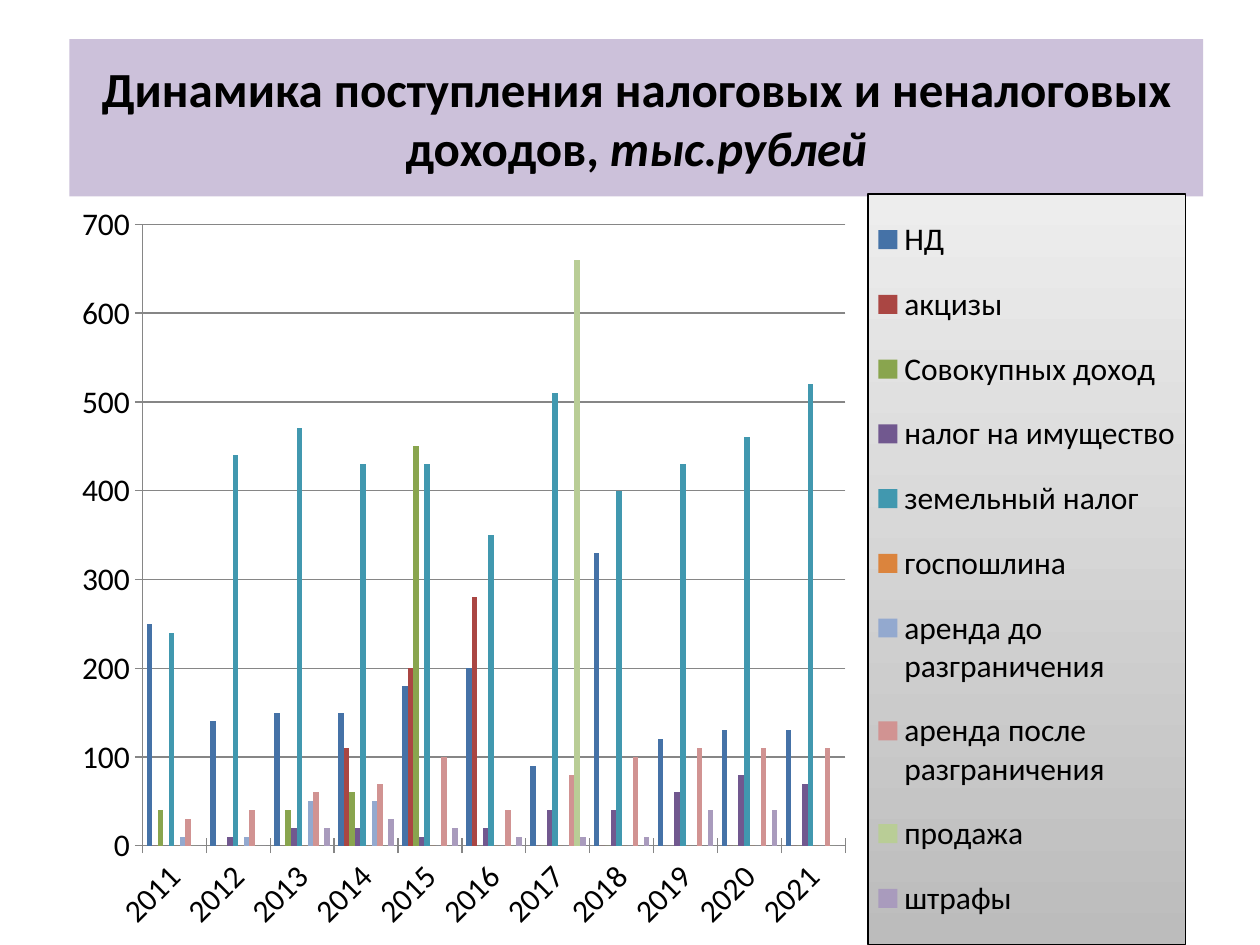
from typing import NamedTuple

from lxml import etree
from pptx import Presentation
from pptx.chart.data import CategoryChartData
from pptx.dml.color import RGBColor
from pptx.enum.chart import XL_CHART_TYPE, XL_LEGEND_POSITION, XL_TICK_MARK
from pptx.enum.text import MSO_ANCHOR, PP_ALIGN
from pptx.enum.shapes import MSO_SHAPE
from pptx.oxml import parse_xml
from pptx.oxml.ns import nsdecls, qn
from pptx.util import Inches, Pt

CLUSTERED = XL_CHART_TYPE.COLUMN_CLUSTERED
RIGHT = XL_LEGEND_POSITION.RIGHT
CROSS = XL_TICK_MARK.CROSS
NO_TICK = XL_TICK_MARK.NONE
MIDDLE = MSO_ANCHOR.MIDDLE
CENTER = PP_ALIGN.CENTER
RECTANGLE = MSO_SHAPE.RECTANGLE

FONT = "Calibri"
BLACK = RGBColor(0x00, 0x00, 0x00)
LILAC = RGBColor(0xCC, 0xC1, 0xDA)
AXIS_GREY = RGBColor(0x86, 0x86, 0x86)
LEGEND_TOP = RGBColor(0xED, 0xED, 0xED)
LEGEND_BOTTOM = RGBColor(0xBC, 0xBC, 0xBC)
BLUE = RGBColor(0x45, 0x72, 0xA7)
RED = RGBColor(0xAA, 0x46, 0x43)
GREEN = RGBColor(0x89, 0xA5, 0x4E)
PURPLE = RGBColor(0x71, 0x58, 0x8F)
TEAL = RGBColor(0x41, 0x98, 0xAF)
ORANGE = RGBColor(0xDB, 0x84, 0x3D)
PALE_BLUE = RGBColor(0x93, 0xA9, 0xCF)
PALE_RED = RGBColor(0xD1, 0x93, 0x92)
PALE_GREEN = RGBColor(0xB9, 0xCD, 0x96)
PALE_PURPLE = RGBColor(0xA9, 0x9B, 0xBD)


class Box(NamedTuple):
    left: float
    top: float
    width: float
    height: float

    def inches(self) -> list:
        return [Inches(v) for v in self]


class Income(NamedTuple):
    name: str
    color: RGBColor
    values: list


TITLE_BOX = Box(0.55, 0.31, 9, 1.25)
CHART_BOX = Box(0.5, 1.48, 9, 6.02)
PLOT_SHARE = Box(0.07, 0.05, 0.62, 0.82)
LEGEND_SHARE = Box(0.71, 0.01, 0.28, 0.99)

YEARS = [str(year) for year in range(2011, 2022)]
INCOMES = [
    Income("НД", BLUE, [250, 140, 150, 150, 180, 200, 90, 330, 120, 130, 130]),
    Income("акцизы", RED, [0, 0, 0, 110, 200, 280, 0, 0, None, 0, 0]),
    Income("Совокупных доход", GREEN, [40, 0, 40, 60, 450, 0, 0, 0, None, 0, 0]),
    Income("налог на имущество", PURPLE, [0, 10, 20, 20, 10, 20, 40, 40, 60, 80, 70]),
    Income("земельный налог", TEAL,
           [240, 440, 470, 430, 430, 350, 510, 400, 430, 460, 520]),
    Income("госпошлина", ORANGE, [0] * len(YEARS)),
    Income("аренда до разграничения", PALE_BLUE,
           [10, 10, 50, 50, 0, 0, 0, 0, None, 0, 0]),
    Income("аренда после разграничения", PALE_RED,
           [30, 40, 60, 70, 100, 40, 80, 100, 110, 110, 110]),
    Income("продажа", PALE_GREEN, [0, 0, 0, 0, 0, 0, 660, 0, None, None, 0]),
    Income("штрафы", PALE_PURPLE, [0, 0, 20, 30, 20, 10, 10, 10, 40, 40, 0]),
]


def layout_xml(share: Box, inner: bool) -> etree._Element:
    target = '<c:layoutTarget val="inner"/>' if inner else ""
    return parse_xml(
        f'<c:layout {nsdecls("c")}><c:manualLayout>{target}'
        '<c:xMode val="edge"/><c:yMode val="edge"/>'
        f'<c:x val="{share.left}"/><c:y val="{share.top}"/>'
        f'<c:w val="{share.width}"/><c:h val="{share.height}"/>'
        "</c:manualLayout></c:layout>"
    )


def replace_layout(parent, share: Box, index: int, inner: bool = False) -> None:
    for old in parent.findall(qn("c:layout")):
        parent.remove(old)
    parent.insert(index, layout_xml(share, inner))


def add_title(slide) -> None:
    sp = slide.shapes.add_shape(RECTANGLE, *TITLE_BOX.inches())
    sp.shadow.inherit = False
    sp.fill.solid()
    sp.fill.fore_color.rgb = LILAC
    sp.line.fill.background()
    tf = sp.text_frame
    tf.word_wrap = True
    tf.vertical_anchor = MIDDLE
    p = tf.paragraphs[0]
    p.alignment = CENTER
    p.font.name = FONT
    p.font.size = Pt(28)
    p.font.bold = True
    p.font.color.rgb = BLACK
    p.add_run().text = "Динамика поступления налоговых и неналоговых доходов, "
    r = p.add_run()
    r.text = "тыс.рублей"
    r.font.italic = True


def style_font(font) -> None:
    font.name = FONT
    font.size = Pt(18)
    font.color.rgb = BLACK


def style_axis(axis) -> None:
    axis.major_tick_mark = CROSS
    axis.minor_tick_mark = NO_TICK
    axis.format.line.color.rgb = AXIS_GREY
    style_font(axis.tick_labels.font)


def style_legend(chart) -> None:
    chart.has_legend = True
    legend = chart.legend
    legend.position = RIGHT
    legend.include_in_layout = False
    style_font(legend.font)
    element = legend._element
    replace_layout(element, LEGEND_SHARE, 1)
    element.find(qn("c:overlay")).addnext(parse_xml(
        f'<c:spPr {nsdecls("c", "a")}><a:gradFill><a:gsLst>'
        f'<a:gs pos="0"><a:srgbClr val="{LEGEND_TOP}"/></a:gs>'
        f'<a:gs pos="100000"><a:srgbClr val="{LEGEND_BOTTOM}"/></a:gs>'
        '</a:gsLst><a:lin ang="5400000" scaled="0"/></a:gradFill>'
        f'<a:ln w="9525"><a:solidFill><a:srgbClr val="{BLACK}"/></a:solidFill>'
        "</a:ln></c:spPr>"
    ))


def add_income_chart(slide) -> None:
    data = CategoryChartData()
    data.categories = YEARS
    for income in INCOMES:
        data.add_series(income.name, income.values)
    chart = slide.shapes.add_chart(CLUSTERED, *CHART_BOX.inches(), data).chart
    chart.has_title = False
    style_font(chart.font)

    plot = chart.plots[0]
    plot.vary_by_categories = False
    plot.gap_width = 150
    plot.overlap = 0
    for series, income in zip(plot.series, INCOMES):
        series.invert_if_negative = False
        series.format.fill.solid()
        series.format.fill.fore_color.rgb = income.color

    for axis in (chart.category_axis, chart.value_axis):
        style_axis(axis)
    years = chart.category_axis._element.find(qn("c:txPr"))
    years.find(qn("a:bodyPr")).set("rot", "-2700000")
    amounts = chart.value_axis
    amounts.minimum_scale, amounts.maximum_scale = 0, 700
    amounts.major_unit = 100
    amounts.has_major_gridlines = True
    amounts.major_gridlines.format.line.color.rgb = AXIS_GREY

    style_legend(chart)
    plot_area = chart._chartSpace.chart.plotArea
    replace_layout(plot_area, PLOT_SHARE, 0, inner=True)


def main() -> None:
    prs = Presentation()
    prs.slide_width, prs.slide_height = Inches(10), Inches(7.5)
    slide = prs.slides.add_slide(prs.slide_layouts[6])
    add_title(slide)
    add_income_chart(slide)
    prs.save("out.pptx")


if __name__ == "__main__":
    main()
